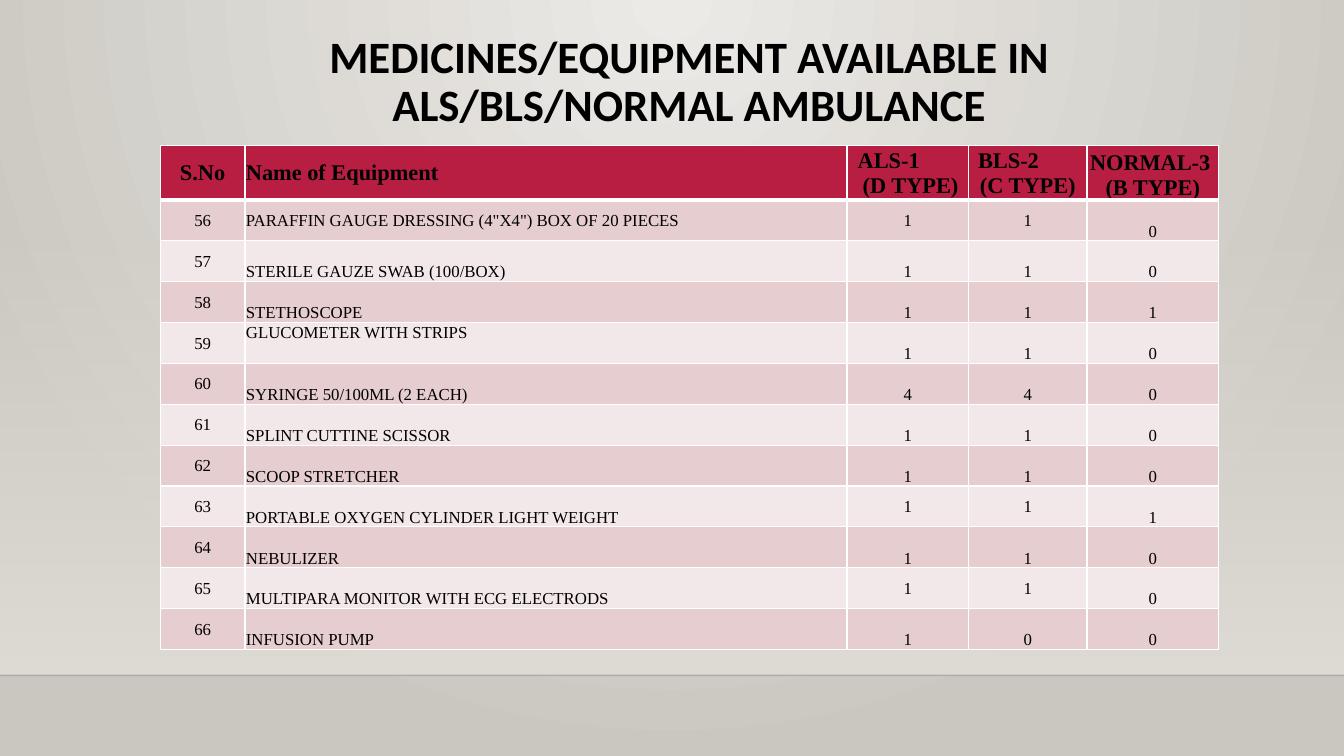
from lxml import etree
from pptx import Presentation
from pptx.dml.color import RGBColor
from pptx.enum import shapes, text
from pptx.oxml.ns import qn
from pptx.util import Pt

COLORS = {
    "black": "000000", "white": "FFFFFF", "header": "B71E42",
    "band_dark": "E6CDCF", "band_light": "F3E8E9",
    "backdrop_inner": "ECEAE7", "backdrop_outer": "CAC7C1", "wall": "DFDBD5",
}
WIDTH, HEIGHT = 960, 540
FLOOR_TOP = 482.4
TABLE_LEFT, TABLE_TOP = 114.5, 103.7
COLUMN_WIDTHS = [60.5, 430, 87, 84.5, 94]
HEADER_HEIGHT, ROW_HEIGHT = 36.5, 29.2
CENTER, LEFT = text.PP_ALIGN.CENTER, text.PP_ALIGN.LEFT
ANCHORS = {
    "t": text.MSO_ANCHOR.TOP,
    "m": text.MSO_ANCHOR.MIDDLE,
    "b": text.MSO_ANCHOR.BOTTOM,
}

# Each header cell: anchor and lines of (text, alignment, left indent)
HEADER = [
    ("m", [("S.No", CENTER, 0)]),
    ("m", [("Name of Equipment", LEFT, 0)]),
    ("m", [("ALS-1", LEFT, 7), ("(D TYPE)", CENTER, 4)]),
    ("m", [("BLS-2", LEFT, 6), ("(C TYPE)", CENTER, 0)]),
    ("b", [("NORMAL-3", LEFT, 1.5), ("(B TYPE)", CENTER, 0)]),
]
# Name, counts per ambulance type, anchors of the five cells
FIRST_NUMBER = 56
EQUIPMENT = [
    ('PARAFFIN GAUGE DRESSING (4"X4") BOX OF 20 PIECES', (1, 1, 0), "mmmmb"),
    ("STERILE GAUZE SWAB (100/BOX)", (1, 1, 0), "mbbbb"),
    ("STETHOSCOPE", (1, 1, 1), "mbbbb"),
    ("GLUCOMETER WITH STRIPS", (1, 1, 0), "mtbbb"),
    ("SYRINGE 50/100ML (2 EACH)", (4, 4, 0), "mbbbb"),
    ("SPLINT CUTTINE SCISSOR", (1, 1, 0), "mbbbb"),
    ("SCOOP STRETCHER", (1, 1, 0), "mbbbb"),
    ("PORTABLE OXYGEN CYLINDER LIGHT WEIGHT", (1, 1, 1), "mbmmb"),
    ("NEBULIZER", (1, 1, 0), "mbbbb"),
    ("MULTIPARA MONITOR WITH ECG ELECTRODS", (1, 1, 0), "mbmmb"),
    ("INFUSION PUMP", (1, 0, 0), "mbbbb"),
]


def rgb(name):
    return RGBColor.from_string(COLORS[name])


def add_child(parent, tag, **attributes):
    child = etree.SubElement(parent, qn(tag))
    for key, value in attributes.items():
        child.set(key, str(value))
    return child


def set_gradient(fill, element, stops):
    """Fill with (position, color, opacity) stops; return the gradient element."""
    fill.gradient()
    gradient = element.find(".//" + qn("a:gradFill"))
    gradient.clear()
    stop_list = add_child(gradient, "a:gsLst")
    for position, color, opacity in stops:
        stop = add_child(stop_list, "a:gs", pos=position * 1000)
        tint = add_child(stop, "a:srgbClr", val=COLORS[color])
        if opacity < 100:
            add_child(tint, "a:alpha", val=opacity * 1000)
    return gradient


def set_font(paragraph, name, size, bold):
    font = paragraph.font
    font.name, font.size, font.bold = name, Pt(size), bold
    font.color.rgb = rgb("black")


def add_backdrop(slide):
    gradient = set_gradient(slide.background.fill, slide.element,
                            [(0, "backdrop_inner", 100), (100, "backdrop_outer", 100)])
    circle = add_child(gradient, "a:path", path="circle")
    add_child(circle, "a:fillToRect", l=43000, t=0, r=43000, b=100000)


def add_wall(slide):
    top = 159
    wall = slide.shapes.add_shape(shapes.MSO_SHAPE.RECTANGLE, 0, Pt(top),
                                  Pt(WIDTH), Pt(FLOOR_TOP - top))
    wall.shadow.inherit = False
    wall.line.fill.background()
    gradient = set_gradient(wall.fill, wall.element,
                            [(0, "wall", 0), (100, "wall", 100)])
    add_child(gradient, "a:lin", ang=5400000, scaled=0)


def add_floor_line(slide):
    line = slide.shapes.add_connector(shapes.MSO_CONNECTOR.STRAIGHT, 0, Pt(FLOOR_TOP),
                                      Pt(WIDTH), Pt(FLOOR_TOP))
    line.line.width = Pt(1)
    line.line.color.rgb = rgb("black")
    properties = line.element.spPr
    add_child(properties.find(".//" + qn("a:srgbClr")), "a:alpha", val=20000)
    add_child(properties, "a:effectLst")


def add_title(slide, wording):
    box = slide.shapes.add_textbox(Pt(TABLE_LEFT), Pt(21), Pt(sum(COLUMN_WIDTHS)), Pt(83))
    frame = box.text_frame
    frame.word_wrap = True
    paragraph = frame.paragraphs[0]
    paragraph.text = wording
    paragraph.alignment = CENTER
    paragraph.line_spacing = 0.9
    set_font(paragraph, "Calibri", 32, True)


def style_cell(cell, color, anchor, top=1, bottom=1):
    cell.margin_left = cell.margin_top = cell.margin_right = Pt(0.7)
    cell.margin_bottom = 0
    cell.vertical_anchor = ANCHORS[anchor]
    properties = cell._tc.get_or_add_tcPr()
    for side, width in (("L", 1), ("R", 1), ("T", top), ("B", bottom)):
        border = add_child(properties, "a:ln" + side, w=Pt(width))
        add_child(add_child(border, "a:solidFill"), "a:srgbClr", val=COLORS["white"])
    cell.fill.solid()
    cell.fill.fore_color.rgb = rgb(color)


def write_cell(cell, lines, size, bold):
    frame = cell.text_frame
    for index, (wording, alignment, indent) in enumerate(lines):
        paragraph = frame.add_paragraph() if index else frame.paragraphs[0]
        paragraph.text = wording
        paragraph.alignment = alignment
        if indent:
            paragraph._p.get_or_add_pPr().set("marL", str(Pt(indent)))
        set_font(paragraph, "Times New Roman", size, bold)


def add_equipment_table(slide):
    heights = [HEADER_HEIGHT] + [ROW_HEIGHT] * len(EQUIPMENT)
    table = slide.shapes.add_table(len(heights), len(COLUMN_WIDTHS), Pt(TABLE_LEFT),
                                   Pt(TABLE_TOP), Pt(sum(COLUMN_WIDTHS)),
                                   Pt(sum(heights))).table
    for column, width in zip(table.columns, COLUMN_WIDTHS):
        column.width = Pt(width)
    for row, height in zip(table.rows, heights):
        row.height = Pt(height)

    # Header row
    for column, (anchor, lines) in enumerate(HEADER):
        cell = table.cell(0, column)
        style_cell(cell, "header", anchor, bottom=3)
        write_cell(cell, lines, 16, True)

    # Equipment rows
    for row, (name, counts, anchors) in enumerate(EQUIPMENT, 1):
        color = "band_dark" if row % 2 else "band_light"
        values = [FIRST_NUMBER + row - 1, name, *counts]
        for column, (value, anchor) in enumerate(zip(values, anchors)):
            cell = table.cell(row, column)
            style_cell(cell, color, anchor, top=3 if row == 1 else 1)
            write_cell(cell, [(str(value), LEFT if column == 1 else CENTER, 0)], 12, False)


def main():
    presentation = Presentation()
    presentation.slide_width, presentation.slide_height = Pt(WIDTH), Pt(HEIGHT)
    slide = presentation.slides.add_slide(presentation.slide_layouts[6])
    add_backdrop(slide)
    add_wall(slide)
    add_floor_line(slide)
    add_title(slide, "MEDICINES/EQUIPMENT AVAILABLE IN ALS/BLS/NORMAL AMBULANCE")
    add_equipment_table(slide)
    presentation.save("out.pptx")


if __name__ == "__main__":
    main()
